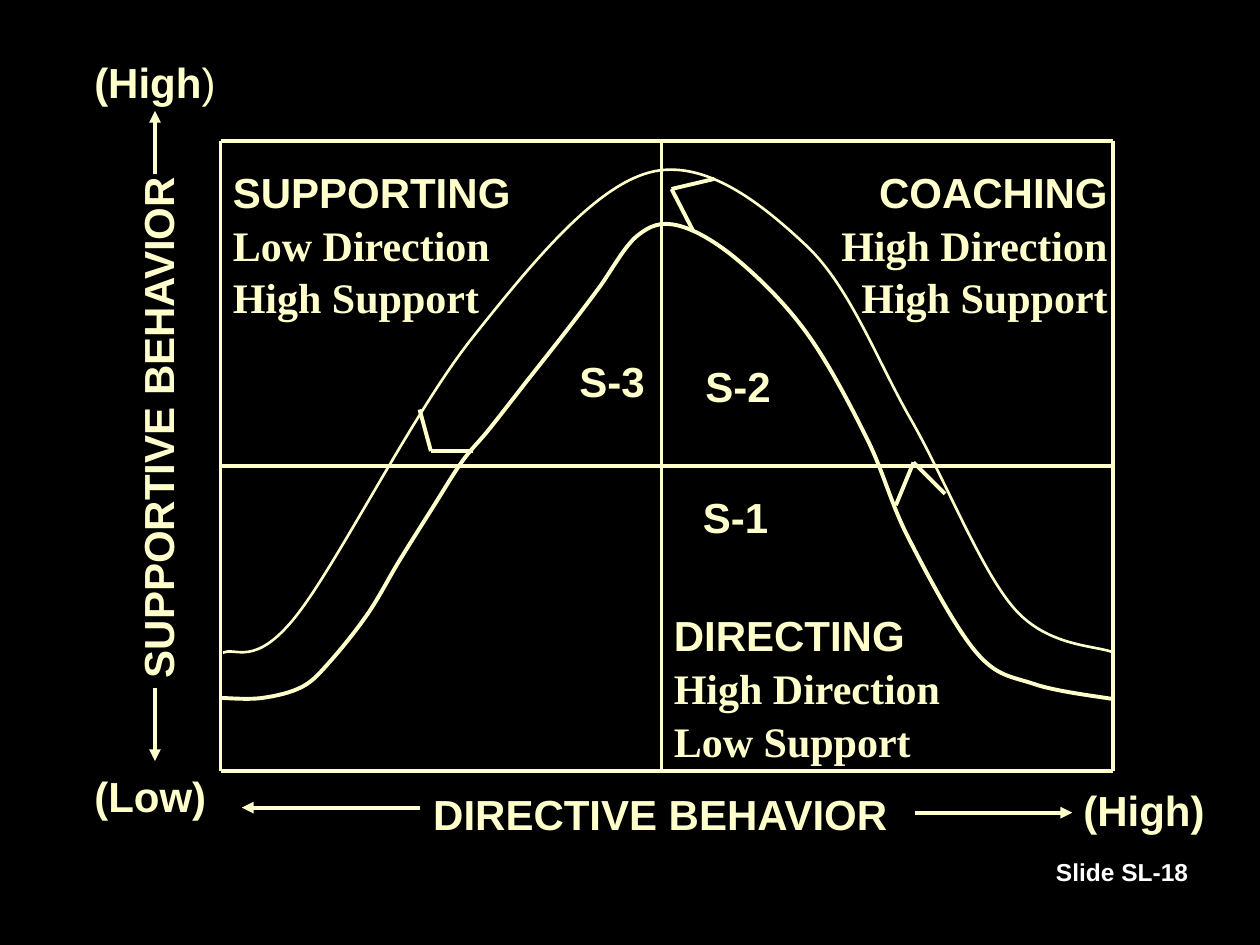
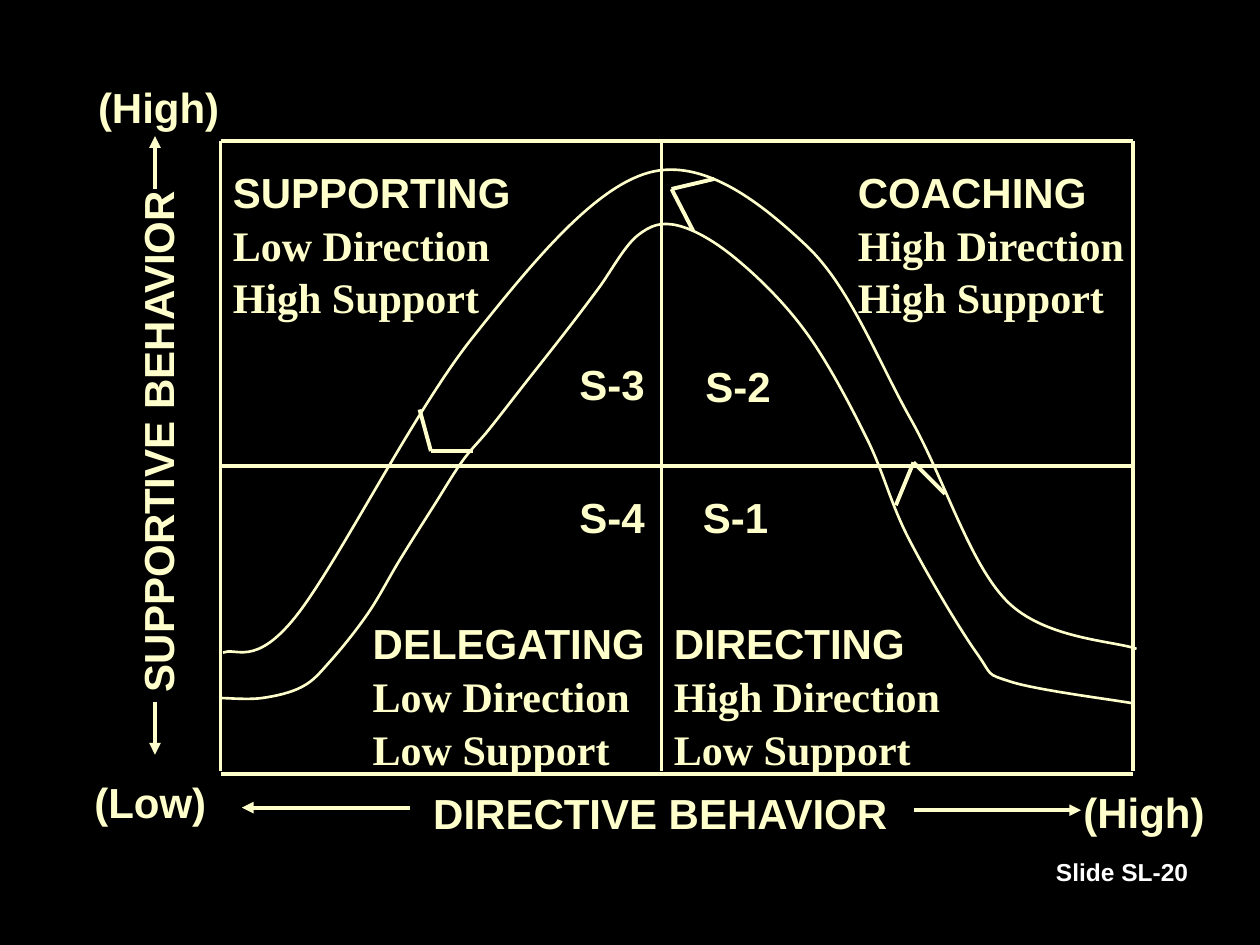
"""Build two slides of a situational leadership grid with its bell curve."""
from lxml import etree
from pptx import Presentation
from pptx.dml.color import RGBColor
from pptx.enum.shapes import MSO_CONNECTOR, MSO_SHAPE
from pptx.enum.text import MSO_ANCHOR, MSO_AUTO_SIZE, PP_ALIGN
from pptx.oxml.ns import qn
from pptx.util import Cm, Pt

STRAIGHT, RECTANGLE = MSO_CONNECTOR.STRAIGHT, MSO_SHAPE.RECTANGLE
TOP, FIT = MSO_ANCHOR.TOP, MSO_AUTO_SIZE.SHAPE_TO_FIT_TEXT
LEFT, RIGHT = PP_ALIGN.LEFT, PP_ALIGN.RIGHT

CREAM, BLACK, WHITE = "FFFFCC", "000000", "FFFFFF"
SANS, SERIF = "Arial", "Times New Roman"
CM_PER_INCH = 2.54
WIDTH, HEIGHT = 10, 7.5
THIN, THICK = 1.5, 2.25

GRID_LEFT, GRID_TOP, GRID_FOOT = 1.75, 1.12, 6.12
MIDDLE_X, MIDDLE_Y = 5.25, 3.7
AXIS_X = 1.23

CHEVRONS = [
    ((7.25, 3.67), [(7.5, 3.92), (7.11, 4.01)]),
    ((5.33, 1.5), [(5.67, 1.42), (5.5, 1.83)]),
    ((3.42, 3.58), [(3.75, 3.58), (3.33, 3.25)]),
]
OUTER_CURVE = [(1.77, 5.18), (2.35, 4.89), (3.75, 2.68), (5.15, 1.37),
               (6.4, 1.95), (7.23, 3.33)]
INNER_CURVE = [
    (1.75, 5.54), (2.08, 5.54), (2.4, 5.45), (2.62, 5.25), (2.92, 4.87),
    (3.17, 4.45), (3.44, 4.02), (3.67, 3.66), (3.88, 3.41), (4.17, 3.04),
    (4.5, 2.62), (4.75, 2.29), (5.06, 1.87), (5.38, 1.79), (5.85, 2.06),
    (6.4, 2.64), (6.88, 3.48), (7.21, 4.27), (7.75, 5.18),
]

SUPPORTING = ("SUPPORTING", "Low Direction", "High Support")
COACHING = ("COACHING", "High Direction", "High Support")
DIRECTING = ("DIRECTING", "High Direction", "Low Support")
DELEGATING = ("DELEGATING", "Low Direction", "Low Support")

SLIDES = [
    {
        "footer": "Slide SL-18",
        "grid_right": 8.83,
        "grid_bottom": 6.12,
        "outer_end": [(8.05, 4.83), (8.84, 5.18)],
        "inner_end": [(8.21, 5.43), (8.84, 5.55)],
        "inner_weight": THICK,
        "styles": [(SUPPORTING, 1.75, 1.25, 2.43, LEFT),
                   (COACHING, 6.55, 1.25, 2.34, RIGHT),
                   (DIRECTING, 5.25, 4.77, 2.34, LEFT)],
        "stages": [("S-1", 5.48, 3.83), ("S-2", 5.5, 2.79), ("S-3", 4.5, 2.75)],
        "axis_labels": [("DIRECTIVE BEHAVIOR", 3.34, 6.19, 3.83),
                        ("(Low)", 0.65, 6.05, 1.09),
                        ("(High)", 8.5, 6.16, 1.16)],
        "top_label": ([("(High", True), (")", False)], 0.65, 0.38),
        "vertical_label_top": 3.13,
        "arrows": [((3.33, 6.41), (1.92, 6.41)), ((7.26, 6.45), (8.51, 6.45)),
                   ((AXIS_X, 5.46), (AXIS_X, 6.04)),
                   ((AXIS_X, 1.38), (AXIS_X, 0.88))],
    },
    {
        "footer": "Slide SL-20",
        "grid_right": 8.99,
        "grid_bottom": 6.14,
        "outer_end": [(7.99, 4.77), (9.02, 5.15)],
        "inner_end": [(8.02, 5.41), (8.98, 5.58)],
        "inner_weight": THIN,
        "styles": [(SUPPORTING, 1.75, 1.25, 2.43, LEFT),
                   (COACHING, 6.71, 1.25, 2.34, LEFT),
                   (DIRECTING, 5.25, 4.83, 2.34, LEFT),
                   (DELEGATING, 2.86, 4.83, 2.38, LEFT)],
        "stages": [("S-1", 5.48, 3.83), ("S-2", 5.5, 2.79),
                   ("S-3", 4.5, 2.78), ("S-4", 4.5, 3.83)],
        "axis_labels": [("DIRECTIVE BEHAVIOR", 3.34, 6.18, 3.83),
                        ("(Low)", 0.65, 6.09, 1.09),
                        ("(High)", 8.5, 6.17, 1.16)],
        "top_label": ([("(High)", True)], 0.68, 0.58),
        "vertical_label_top": 3.24,
        "arrows": [((3.25, 6.41), (1.92, 6.41)), ((7.25, 6.43), (8.58, 6.43)),
                   ((AXIS_X, 5.57), (AXIS_X, 5.99)),
                   ((AXIS_X, 1.5), (AXIS_X, 1.08))],
    },
]


def colour(hex_string):
    return RGBColor.from_string(hex_string)


def lengths(*inches):
    return [Cm(value * CM_PER_INCH) for value in inches]


def style_line(line, weight, hex_string=CREAM):
    line.color.rgb = colour(hex_string)
    line.width = Pt(weight)


def add_line(slide, start, end, arrow=False):
    connector = slide.shapes.add_connector(STRAIGHT, *lengths(*start, *end))
    style_line(connector.line, THICK)
    properties = connector._element.spPr
    if arrow:
        outline = properties.find(qn("a:ln"))
        etree.SubElement(outline, qn("a:tailEnd"), type="triangle")
    etree.SubElement(properties, qn("a:effectLst"))


def add_curve(slide, knots, weight):
    padded = [knots[0], *knots, knots[-1]]
    slopes = [((after[0] - before[0]) / 6, (after[1] - before[1]) / 6)
              for before, after in zip(padded, padded[2:])]
    points = []
    for i in range(len(knots) - 1):
        (x, y), (next_x, next_y) = knots[i], knots[i + 1]
        (dx, dy), (next_dx, next_dy) = slopes[i], slopes[i + 1]
        points += [(x + dx, y + dy), (next_x - next_dx, next_y - next_dy),
                   (next_x, next_y)]
    builder = slide.shapes.build_freeform(*lengths(*knots[0]))
    builder.add_line_segments([lengths(*point) for point in points], close=False)
    curve = builder.convert_to_shape()
    curve.shadow.inherit = False
    curve.fill.background()
    style_line(curve.line, weight)
    outline = curve._element.find(".//" + qn("a:path"))
    segments = outline.findall(qn("a:lnTo"))
    for i in range(0, len(segments), 3):
        bezier = etree.SubElement(outline, qn("a:cubicBezTo"))
        for segment in segments[i:i + 3]:
            bezier.append(segment[0])
            outline.remove(segment)


def add_text(slide, paragraphs, left, top, width, height=0.5, align=LEFT,
             size=24, hex_string=CREAM, wrap=False):
    box = slide.shapes.add_textbox(*lengths(left, top, width, height))
    frame = box.text_frame
    frame.word_wrap = wrap
    frame.vertical_anchor = TOP
    if not wrap:
        frame.auto_size = FIT
    for i, runs in enumerate(paragraphs):
        paragraph = frame.add_paragraph() if i else frame.paragraphs[0]
        paragraph.alignment = align
        paragraph.line_spacing = 1.05
        for words, bold in runs:
            run = paragraph.add_run()
            run.text = words
            run.font.name = SERIF if i else SANS
            run.font.size = Pt(size)
            run.font.bold = bold
            run.font.color.rgb = colour(hex_string)
    return box


def add_backdrop(slide):
    slide.background.fill.solid()
    slide.background.fill.fore_color.rgb = colour(CREAM)
    backdrop = slide.shapes.add_shape(RECTANGLE, *lengths(0, 0, WIDTH, HEIGHT))
    backdrop.shadow.inherit = False
    backdrop.fill.solid()
    backdrop.fill.fore_color.rgb = colour(BLACK)
    style_line(backdrop.line, 0.75, BLACK)


def add_grid(slide, right, bottom):
    for y in (GRID_TOP, MIDDLE_Y, bottom):
        add_line(slide, (GRID_LEFT, y), (right, y))
    for x in (GRID_LEFT, MIDDLE_X, right):
        add_line(slide, (x, GRID_TOP), (x, GRID_FOOT))


def add_leadership_slide(deck, content):
    slide = deck.slides.add_slide(deck.slide_layouts[6])
    add_backdrop(slide)
    add_grid(slide, content["grid_right"], content["grid_bottom"])
    add_curve(slide, OUTER_CURVE + content["outer_end"], THIN)
    add_curve(slide, INNER_CURVE + content["inner_end"], content["inner_weight"])
    for tip, ends in CHEVRONS:
        for end in ends:
            add_line(slide, tip, end)
    for lines, left, top, width, align in content["styles"]:
        add_text(slide, [[(words, True)] for words in lines],
                 left, top, width, 1.31, align)
    for stage, left, top in content["stages"]:
        add_text(slide, [[(stage, True)]], left, top, 0.73, 0.51)
    for label, left, top, width in content["axis_labels"]:
        add_text(slide, [[(label, True)]], left, top, width)
    runs, left, top = content["top_label"]
    add_text(slide, [runs], left, top, 1.16)
    vertical_label = add_text(slide, [[("SUPPORTIVE BEHAVIOR", True)]],
                              -0.87, content["vertical_label_top"], 4.2)
    vertical_label.rotation = 270
    for start, end in content["arrows"]:
        add_line(slide, start, end, arrow=True)
    add_text(slide, [[(content["footer"], True)]], 7.45, 6.74, 2.08,
             align=RIGHT, size=14, hex_string=WHITE, wrap=True)


def main():
    deck = Presentation()
    deck.slide_width, deck.slide_height = lengths(WIDTH, HEIGHT)
    for content in SLIDES:
        add_leadership_slide(deck, content)
    deck.save("out.pptx")


if __name__ == "__main__":
    main()
